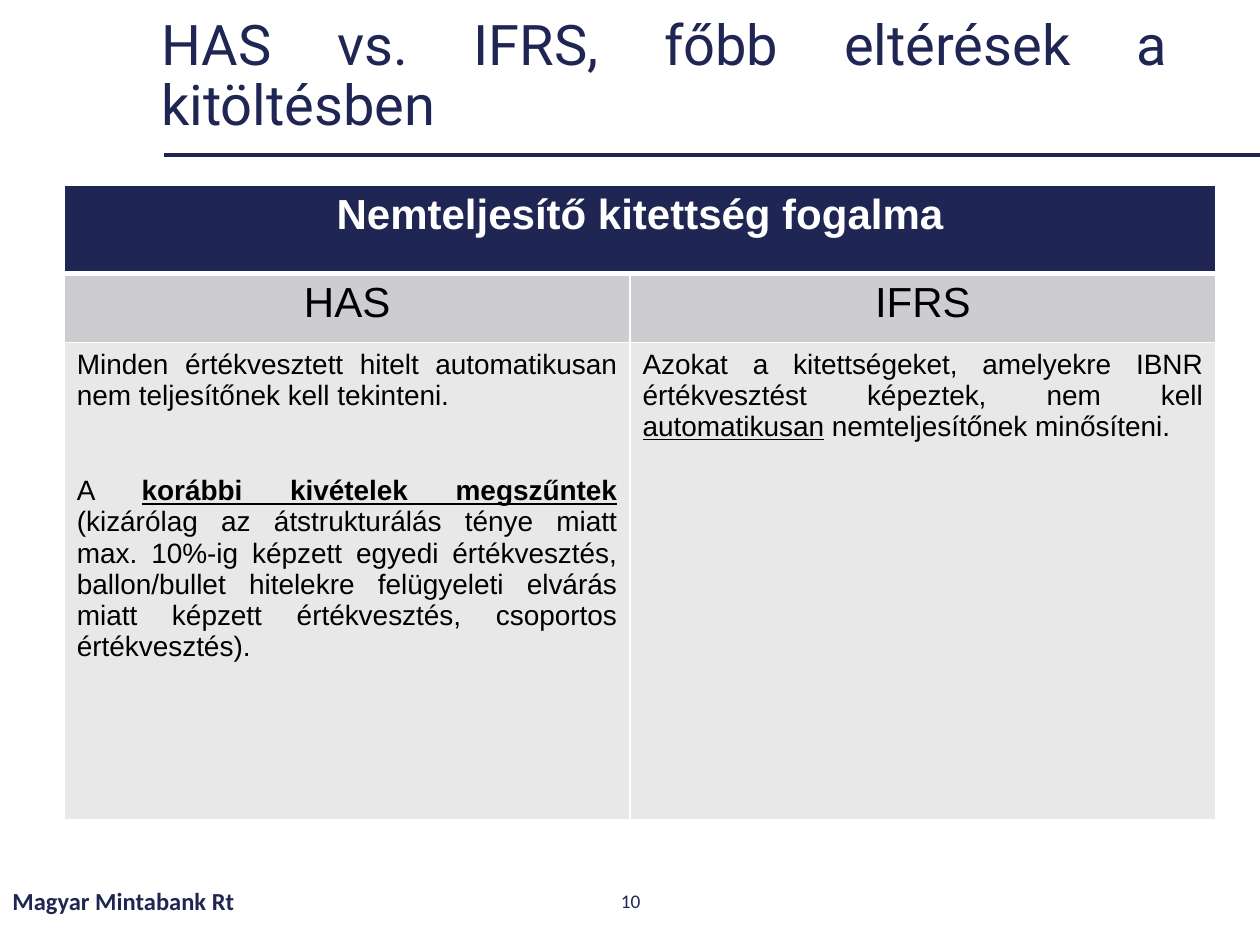
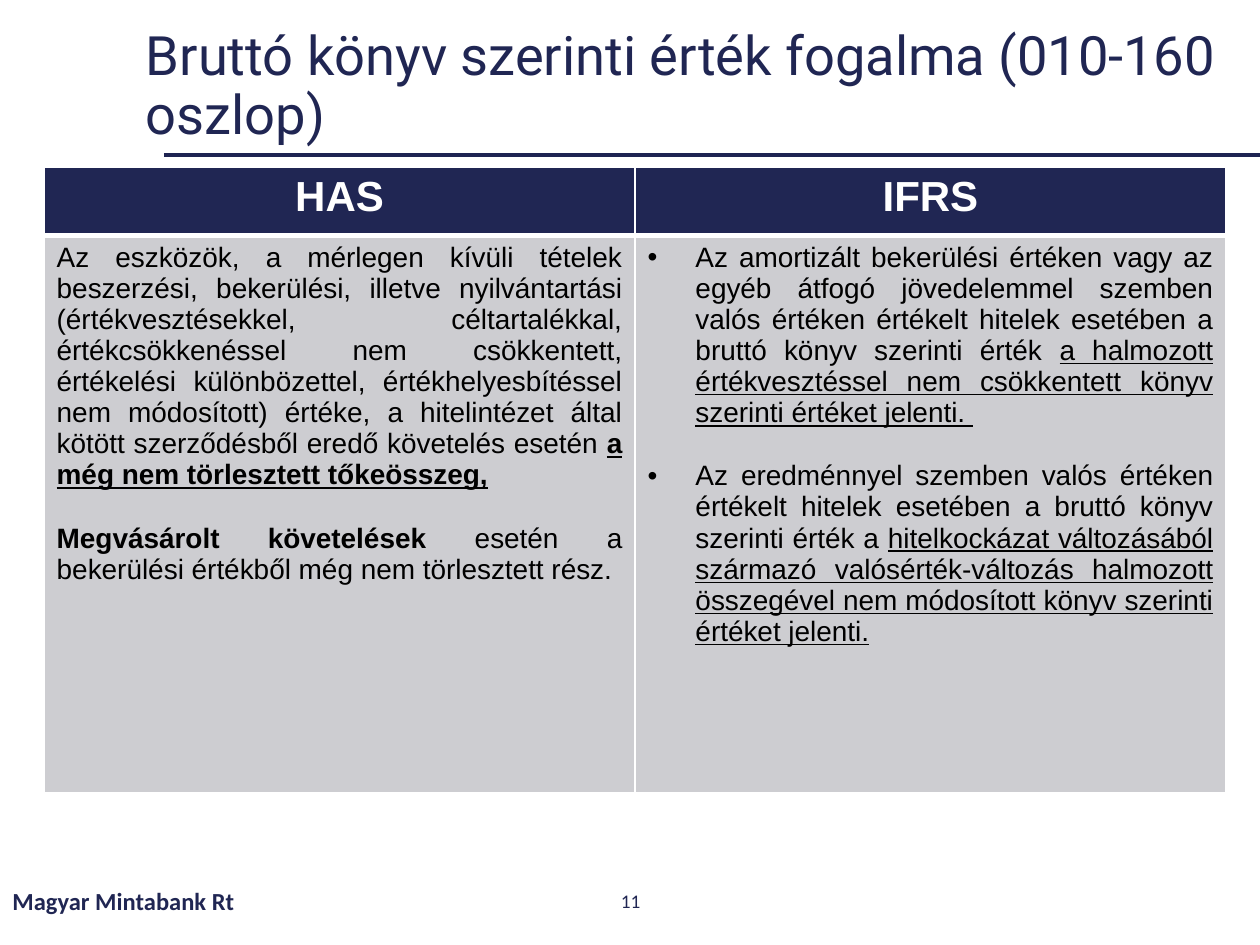
import pptx
import pptx.util
import pptx.dml.color
import pptx.enum.shapes
import pptx.enum.text
import pptx.oxml.ns
import lxml.etree

RGB = pptx.dml.color.RGBColor
NAVY = RGB(0x20, 0x26, 0x53)
RULE = RGB(0x1E, 0x24, 0x52)
GREY = RGB(0xCD, 0xCD, 0xD1)
PALE = RGB(0xE8, 0xE8, 0xE9)
WHITE = RGB(0xFF, 0xFF, 0xFF)
BLACK = RGB(0, 0, 0)

ALIGN = pptx.enum.text.PP_ALIGN
MIDDLE = pptx.enum.text.MSO_ANCHOR.MIDDLE
Pt = pptx.util.Pt

# The slide is a grid of 100 columns by 75 rows of square units
UNIT = pptx.util.Inches(0.1)
COLS, ROWS = 100, 75
FOOT_TOP, FOOT_HIGH = 69.5, 4
INDENT = 3.8
BODY_SIZE, HEAD_SIZE = 16, 24
BLANK = 18.4  # height of one empty body line in points


def grid(count):
    return round(count * UNIT)


def sub(parent, tag, **attrs):
    return lxml.etree.SubElement(parent, pptx.oxml.ns.qn(tag), attrs)


def add_runs(para, runs, font, size, color):
    """Write (text, marks) pairs; mark b is bold and u is underlined."""
    for text, marks in runs:
        run = para.add_run()
        run.text = text
        run.font.name = font
        run.font.size = Pt(size)
        run.font.color.rgb = color
        run.font.bold = "b" in marks
        run.font.underline = "u" in marks


def add_text(slide, place, text, font, size, marks="", align=ALIGN.LEFT, lead=1.0):
    box = slide.shapes.add_textbox(*map(grid, place))
    frame = box.text_frame
    frame.word_wrap = True
    frame.vertical_anchor = MIDDLE
    para = frame.paragraphs[0]
    para.alignment = align
    para.line_spacing = lead
    add_runs(para, [(text, marks)], font, size, NAVY)


def add_frame(slide, number):
    """Rule below the title, bank name and slide number."""
    line = slide.shapes.add_connector(
        pptx.enum.shapes.MSO_CONNECTOR.STRAIGHT,
        grid(13), grid(12.3), grid(COLS), grid(12.3))
    line.line.color.rgb = RULE
    line.line.width = Pt(2.25)
    sub(line._element.spPr, "a:effectLst")
    add_text(slide, (0, FOOT_TOP, 33.8, FOOT_HIGH), "Magyar Mintabank Rt", "Calibri", 14, "b")
    add_text(slide, (38.8, FOOT_TOP, 22.5, FOOT_HIGH), str(number), "Calibri", 11,
             align=ALIGN.CENTER)


def add_title(slide, place, text, size, align):
    add_text(slide, place, text, "Roboto", size, align=align, lead=0.9)


def set_edges(cell, top, bottom):
    props = cell._tc.get_or_add_tcPr()
    for side, width in zip("LRTB", (1, 1, top, bottom)):
        edge = sub(props, f"a:ln{side}", w=str(Pt(width)))
        sub(sub(edge, "a:solidFill"), "a:srgbClr", val=str(WHITE))


def add_bullet(para):
    props = para._p.get_or_add_pPr()
    props.set("marL", str(grid(INDENT)))
    props.set("indent", str(-grid(INDENT)))
    sub(props, "a:buFont", typeface="Arial")
    sub(props, "a:buChar", char="•")


def fill_cell(cell, paras, color, size, align, gap, bullets):
    for index, runs in enumerate(paras):
        frame = cell.text_frame
        para = frame.add_paragraph() if index else frame.paragraphs[0]
        para.alignment = align
        if index:
            para.space_before = Pt(gap)
        if bullets:
            add_bullet(para)
        add_runs(para, runs, "Arial", size, color)


def add_table(slide, left, top, widths, rows, gap, bullets=()):
    """Rows are (height, fill, cells); the last row holds the body text."""
    shape = slide.shapes.add_table(
        len(rows), len(widths), grid(left), grid(top),
        grid(sum(widths)), grid(sum(row[0] for row in rows)))
    table = shape.table
    table.first_row = table.horz_banding = False
    for col, width in zip(table.columns, widths):
        col.width = grid(width)
    for index, (height, fill, cells) in enumerate(rows):
        table.rows[index].height = grid(height)
        for cell in table.rows[index].cells:
            set_edges(cell, 3 if index == 1 else 1, 3 if index == 0 else 1)
            cell.fill.solid()
            cell.fill.fore_color.rgb = fill
        if len(cells) < len(widths):
            table.cell(index, 0).merge(table.cell(index, len(widths) - 1))
        body = index == len(rows) - 1
        for col, paras in enumerate(cells):
            fill_cell(table.cell(index, col), paras,
                      WHITE if fill == NAVY else BLACK,
                      BODY_SIZE if body else HEAD_SIZE,
                      ALIGN.JUSTIFY if body else ALIGN.CENTER,
                      gap, body and col in bullets)


def head(text, marks=""):
    return [[(text, marks)]]


# Body text: each cell is a list of paragraphs, each a list of runs
HAS_LOANS = [
    [("Minden értékvesztett hitelt automatikusan nem teljesítőnek kell tekinteni.", "")],
    [("A ", ""), ("korábbi kivételek megszűntek", "bu"), (" ", "b"),
     ("(kizárólag az átstrukturálás ténye miatt max. 10%-ig képzett egyedi értékvesztés, "
      "ballon/bullet hitelekre felügyeleti elvárás miatt képzett értékvesztés, "
      "csoportos értékvesztés).", "")],
]
IFRS_LOANS = [
    [("Azokat a kitettségeket, amelyekre IBNR értékvesztést képeztek, nem kell ", ""),
     ("automatikusan", "u"), (" nemteljesítőnek minősíteni.", "")],
]
HAS_GROSS = [
    [("Az eszközök, a mérlegen kívüli tételek beszerzési, bekerülési, illetve nyilvántartási "
      "(értékvesztésekkel, céltartalékkal, értékcsökkenéssel nem csökkentett, értékelési "
      "különbözettel, értékhelyesbítéssel nem módosított) értéke, a hitelintézet által "
      "kötött szerződésből eredő követelés esetén ", ""),
     ("a még nem törlesztett tőkeösszeg,", "bu")],
    [("Megvásárolt követelések ", "b"),
     ("esetén a bekerülési értékből még nem törlesztett rész. ", "")],
]
IFRS_GROSS = [
    [("Az amortizált bekerülési értéken vagy az egyéb átfogó jövedelemmel szemben valós "
      "értéken értékelt hitelek esetében a bruttó könyv szerinti érték ", ""),
     ("a halmozott értékvesztéssel nem csökkentett könyv szerinti értéket jelenti. ", "u")],
    [("Az eredménnyel szemben valós értéken értékelt hitelek esetében a bruttó könyv "
      "szerinti érték a ", ""),
     ("hitelkockázat változásából származó valósérték-változás halmozott összegével nem "
      "módosított könyv szerinti értéket jelenti.", "u")],
]


def add_loans(slide):
    add_frame(slide, 10)
    add_title(slide, (11.8, 2, 81.9, 8.3), "HAS vs. IFRS, főbb eltérések a kitöltésben",
              32, ALIGN.JUSTIFY)
    add_table(slide, 5.1, 14.7, (44.9, 46.5), [
        (7, NAVY, [head("Nemteljesítő kitettség fogalma", "b")]),
        (5.5, GREY, [head("HAS"), head("IFRS")]),
        (37.9, PALE, [HAS_LOANS, IFRS_LOANS]),
    ], gap=2 * BLANK)


def add_gross(slide):
    add_frame(slide, 11)
    add_title(slide, (10.6, 2.1, 88.2, 9.7),
              "Bruttó könyv szerinti érték fogalma (010-160 oszlop)", 31, ALIGN.LEFT)
    add_table(slide, 3.5, 13.3, (46.9, 46.9), [
        (5.4, NAVY, [head("HAS", "b"), head("IFRS", "b")]),
        (44.2, GREY, [HAS_GROSS, IFRS_GROSS]),
    ], gap=BLANK, bullets=(1,))


def main():
    deck = pptx.Presentation()
    deck.slide_width, deck.slide_height = grid(COLS), grid(ROWS)
    blank = deck.slide_layouts[6]
    for build in (add_loans, add_gross):
        build(deck.slides.add_slide(blank))
    deck.save("out.pptx")


if __name__ == "__main__":
    main()
